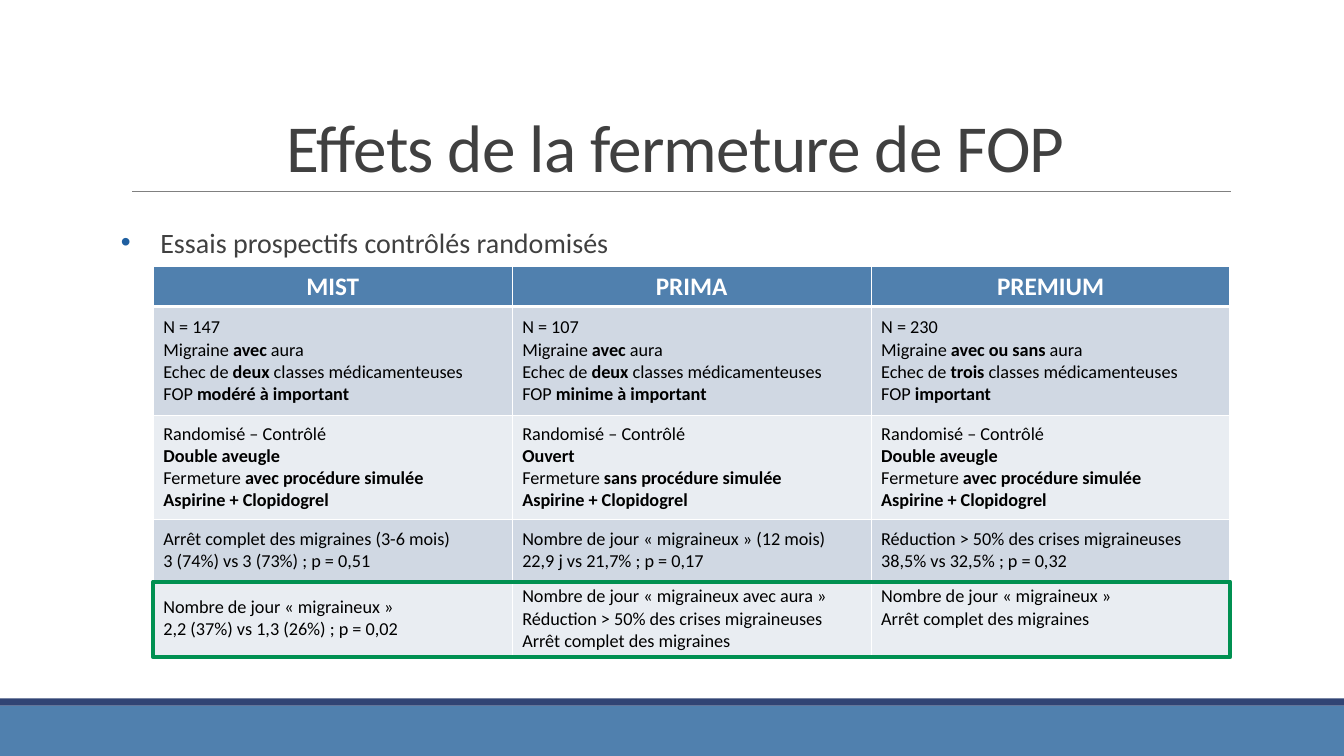
"""Build the slide comparing three randomised trials of PFO closure."""
from lxml import etree
from pptx import Presentation
from pptx.dml.color import RGBColor
from pptx.enum import shapes, text
from pptx.oxml import ns
from pptx.util import Inches, Pt

COLORS = {"blue": "5080AE", "navy": "314474", "rule": "808080", "grey": "404040",
          "bullet": "1F5FA0", "white": "FFFFFF", "black": "000000",
          "dark_band": "D0D8E3", "light_band": "E9EDF2", "green": "009051"}
TRIALS = ["MIST", "PRIMA", "PREMIUM"]
ROWS = [
    [["N = 147", "Migraine **avec **aura",
      "Echec de **deux **classes médicamenteuses", "FOP **modéré à important**"],
     ["N = 107", "Migraine **avec **aura",
      "Echec de **deux **classes médicamenteuses", "FOP **minime à important**"],
     ["N = 230", "Migraine **avec ou sans **aura",
      "Echec de **trois **classes médicamenteuses", "FOP **important**"]],
    [["Randomisé – Contrôlé", f"**{blinding}**",
      f"Fermeture **{sham} procédure simulée**", "**Aspirine + Clopidogrel**"]
     for blinding, sham in [("Double aveugle", "avec"), ("Ouvert", "sans"),
                            ("Double aveugle", "avec")]],
    [["Arrêt complet des migraines (3-6 mois)", "3 (74%) vs 3 (73%) ; p = 0,51"],
     ["Nombre de jour « migraineux » (12 mois)", "22,9 j vs 21,7% ; p = 0,17"],
     ["Réduction > 50% des crises migraineuses", "38,5% vs 32,5% ; p = 0,32"]],
    [["Nombre de jour « migraineux »", "2,2 (37%) vs 1,3 (26%) ; p = 0,02"],
     ["Nombre de jour « migraineux avec aura »",
      "Réduction > 50% des crises migraineuses", "Arrêt complet des migraines"],
     ["Nombre de jour « migraineux »", "Arrêt complet des migraines"]],
]


def rgb(name):
    return RGBColor.from_string(COLORS[name])


def style(p, size, color, bold=None):
    p.font.name = "Calibri"
    p.font.size = Pt(size)
    p.font.color.rgb = rgb(color)
    p.font.bold = bold


prs = Presentation()
prs.slide_width, prs.slide_height = Inches(13.33), Inches(7.5)
s = prs.slides.add_slide(prs.slide_layouts[5])

for top, height, color in [(7, 0.5, "blue"), (6.93, 0.07, "navy")]:
    band = s.shapes.add_shape(shapes.MSO_SHAPE.RECTANGLE, 0, Inches(top),
                              prs.slide_width, Inches(height))
    band.shadow.inherit = False
    band.fill.solid()
    band.fill.fore_color.rgb = rgb(color)
    band.line.fill.background()

rule = s.shapes.add_connector(shapes.MSO_CONNECTOR.STRAIGHT, Inches(1.31), Inches(1.9),
                              Inches(12.21), Inches(1.9))
rule.line.color.rgb = rgb("rule")
rule.line.width = Pt(0.5)
etree.SubElement(rule._element.spPr, ns.qn("a:effectLst"))

title = s.shapes.title
title.left, title.top = Inches(1.2), Inches(1.08)
title.width, title.height = Inches(11), Inches(0.82)
tf = title.text_frame
tf.text = "Effets de la fermeture de FOP"
tf.auto_size = text.MSO_AUTO_SIZE.NONE
tf.vertical_anchor = text.MSO_ANCHOR.BOTTOM
p = tf.paragraphs[0]
p.alignment = text.PP_ALIGN.CENTER
p.line_spacing = 0.85
style(p, 48, "grey")
p.runs[0].font._element.set("spc", "-50")

intro = s.shapes.add_textbox(Inches(1.2), Inches(2.02), Inches(11), Inches(0.6))
tf = intro.text_frame
tf.word_wrap = True
tf.margin_left = tf.margin_right = 0
p = tf.paragraphs[0]
p.text = "Essais prospectifs contrôlés randomisés"
p.line_spacing = 1.5
style(p, 20, "grey")
pPr = p._p.get_or_add_pPr()
pPr.set("marL", str(Inches(0.39)))
pPr.set("indent", str(-Inches(0.39)))
bullet_color = etree.Element(ns.qn("a:buClr"))
etree.SubElement(bullet_color, ns.qn("a:srgbClr"), val=COLORS["bullet"])
bullet_font = etree.Element(ns.qn("a:buFont"), typeface="Arial")
bullet = etree.Element(ns.qn("a:buChar"), char="•")
for i, el in enumerate([bullet_color, bullet_font, bullet], start=1):
    pPr.insert(i, el)

table = s.shapes.add_table(len(ROWS) + 1, len(TRIALS), Inches(1.52), Inches(2.64),
                           Inches(10.68), Inches(3.87)).table
for row, height in zip(table.rows, [0.4, 1.08, 1.03, 0.61, 0.75]):
    row.height = Inches(height)

for r, row in enumerate([[[name] for name in TRIALS]] + ROWS):
    for c, lines in enumerate(row):
        cell = table.cell(r, c)
        cell.fill.solid()
        cell.fill.fore_color.rgb = rgb("blue" if r == 0 else
                                       "dark_band" if r % 2 else "light_band")
        cell.vertical_anchor = text.MSO_ANCHOR.MIDDLE if r else text.MSO_ANCHOR.TOP
        tf = cell.text_frame
        for i, line in enumerate(lines):
            p = tf.paragraphs[0] if i == 0 else tf.add_paragraph()
            for j, part in enumerate(line.split("**")):
                if part:
                    run = p.add_run()
                    run.text = part
                    run.font.bold = r == 0 or j % 2 == 1
            if r == 0:
                p.alignment = text.PP_ALIGN.CENTER
                style(p, 18, "white", True)
            else:
                style(p, 13, "black")
        tcPr = cell._tc.get_or_add_tcPr()
        for i, side in enumerate(["lnL", "lnR", "lnT", "lnB"]):
            thick = (r == 0 and side == "lnB") or (r == 1 and side == "lnT")
            ln = etree.Element(ns.qn("a:" + side), w=str(Pt(3 if thick else 1)))
            fill = etree.SubElement(ln, ns.qn("a:solidFill"))
            etree.SubElement(fill, ns.qn("a:srgbClr"), val=COLORS["white"])
            tcPr.insert(i, ln)
table.cell(len(ROWS), 2).vertical_anchor = text.MSO_ANCHOR.TOP

frame = s.shapes.add_shape(shapes.MSO_SHAPE.RECTANGLE, Inches(1.52), Inches(5.77),
                           Inches(10.68), Inches(0.75))
frame.shadow.inherit = False
frame.fill.background()
frame.line.color.rgb = rgb("green")
frame.line.width = Pt(3)

prs.save("out.pptx")
